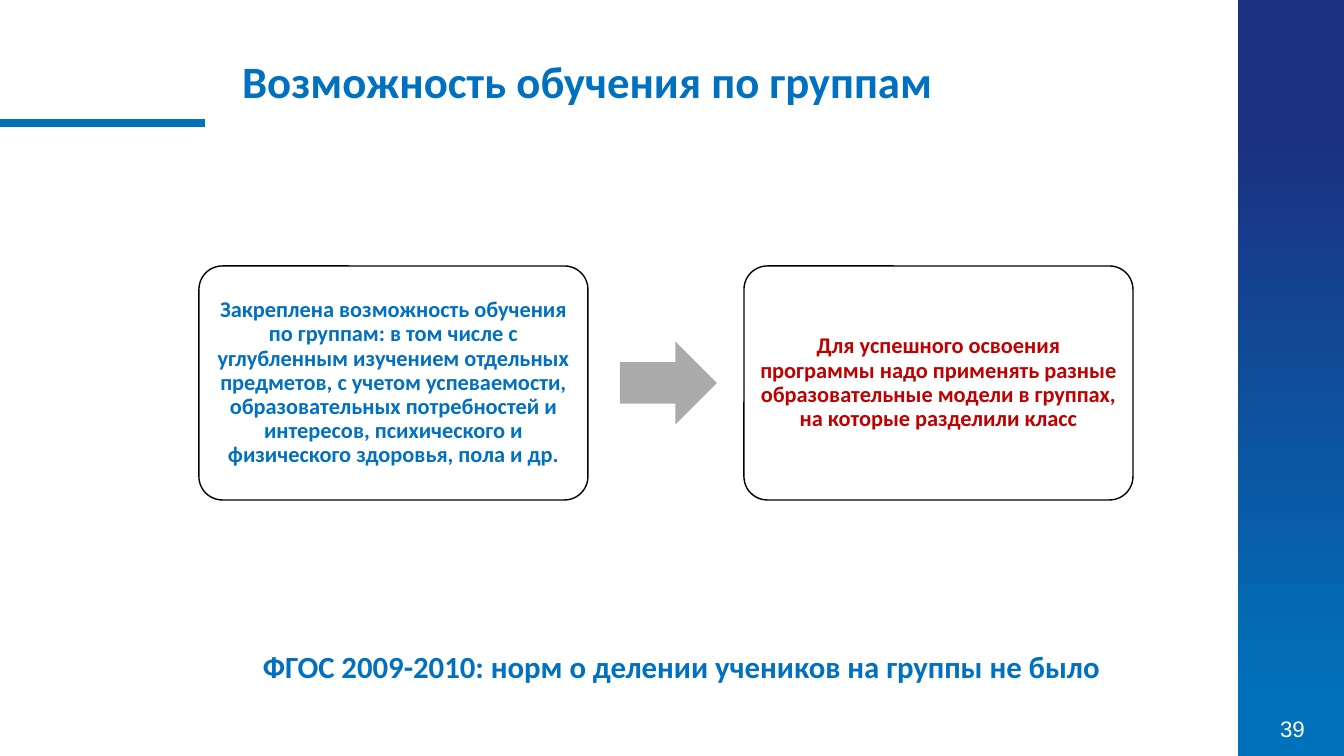
import pptx
import pptx.dml.color
import pptx.enum.shapes
import pptx.enum.text
import pptx.oxml
import pptx.oxml.ns
import pptx.util

TITLE = "Возможность обучения по группам"
CAPTION = "ФГОС 2009-2010: норм о делении учеников на группы не было"
PAGE_NUMBER = "39"
BLUE, RED, WHITE, BLACK, GREY = "0070C0", "C00000", "FFFFFF", "000000", "ABABAB"
BAND_BLUE, BAND_NAVY = "0072BC", "1B3281"
CARDS = [
    ("Закреплена возможность обучения по группам: в том числе с углубленным "
     "изучением отдельных предметов, с учетом успеваемости, образовательных "
     "потребностей и интересов, психического и физического здоровья, пола и др.", BLUE),
    ("Для успешного освоения программы надо применять разные образовательные "
     "модели в группах, на которые разделили класс", RED),
]

# Lengths in px
PAGE_WIDTH, PAGE_HEIGHT = 1344, 756
BAND_LEFT = 1238
CARD_LEFT, CARD_TOP, CARD_WIDTH, CARD_HEIGHT, CARD_STEP = 199, 266, 389, 234, 545
CARD_INSET = 7
ARROW_LEFT, ARROW_WIDTH, ARROW_HEIGHT = 620, 97, 83

SHAPE = pptx.enum.shapes.MSO_SHAPE
ALIGN = pptx.enum.text.PP_ALIGN
ANCHOR = pptx.enum.text.MSO_ANCHOR


def px(length):
    return pptx.util.Emu(round(length * 914400 / 100.8))


def rgb(color):
    return pptx.dml.color.RGBColor.from_string(color)


def write(shape, text, color, size, align=ALIGN.CENTER, anchor=ANCHOR.TOP,
          name="Calibri", bold=True, line_spacing=1.0):
    frame = shape.text_frame
    frame.word_wrap = True
    frame.auto_size = pptx.enum.text.MSO_AUTO_SIZE.NONE
    frame.vertical_anchor = anchor
    para = frame.paragraphs[0]
    para.alignment = align
    para.line_spacing = line_spacing
    span = para.add_run()
    span.text = text
    for key, value in {"name": name, "size": pptx.util.Pt(size), "bold": bold}.items():
        setattr(span.font, key, value)
    span.font.color.rgb = rgb(color)


def add_block(page, kind, left, top, width, height):
    block = page.shapes.add_shape(kind, px(left), px(top), px(width), px(height))
    block.shadow.inherit = False
    block.line.fill.background()
    return block


def add_text_box(page, left, top, width, height):
    return page.shapes.add_textbox(px(left), px(top), px(width), px(height))


def add_side_band(page):
    band = add_block(page, SHAPE.RECTANGLE, BAND_LEFT, 0, PAGE_WIDTH - BAND_LEFT, PAGE_HEIGHT)
    band.fill.gradient()
    band.fill.gradient_angle = 270
    stops = [(0.18, BAND_NAVY), (0.94, BAND_BLUE)]
    for stop, (position, color) in zip(band.fill.gradient_stops, stops):
        stop.position = position
        stop.color.rgb = rgb(color)


def add_title_rule(page):
    rule = page.shapes.add_connector(
        pptx.enum.shapes.MSO_CONNECTOR.STRAIGHT, 0, px(123), px(205), px(123))
    rule.line.color.rgb = rgb(BAND_BLUE)
    rule.line.width = pptx.util.Pt(6)
    properties = rule._element.spPr
    properties.append(pptx.oxml.parse_xml(
        f"<a:effectLst {pptx.oxml.ns.nsdecls('a')}/>"))


def add_title(page):
    title = page.shapes.title
    place = {"left": 232, "top": 49, "width": 978, "height": 65}
    for key, value in place.items():
        setattr(title, key, px(value))
    write(title, TITLE, BLUE, 32, align=ALIGN.LEFT)


def add_card(page, left, text, color):
    card = add_block(page, SHAPE.ROUNDED_RECTANGLE, left, CARD_TOP, CARD_WIDTH, CARD_HEIGHT)
    card.adjustments[0] = 0.1
    card.fill.solid()
    card.fill.fore_color.rgb = rgb(WHITE)
    card.line.color.rgb = rgb(BLACK)
    card.line.width = pptx.util.Pt(1)
    for side in ("left", "top", "right", "bottom"):
        setattr(card.text_frame, f"margin_{side}", px(CARD_INSET))
    write(card, text, color, 16, anchor=ANCHOR.MIDDLE, line_spacing=0.9)


def add_arrow(page):
    top = CARD_TOP + (CARD_HEIGHT - ARROW_HEIGHT) / 2
    arrow = add_block(page, SHAPE.RIGHT_ARROW, ARROW_LEFT, top, ARROW_WIDTH, ARROW_HEIGHT)
    arrow.fill.solid()
    arrow.fill.fore_color.rgb = rgb(GREY)


def main():
    deck = pptx.Presentation()
    deck.slide_width, deck.slide_height = px(PAGE_WIDTH), px(PAGE_HEIGHT)
    page = deck.slides.add_slide(deck.slide_layouts[5])
    add_side_band(page)
    write(add_text_box(page, 1252, 708, 81, 41), PAGE_NUMBER, WHITE, 16,
          anchor=ANCHOR.MIDDLE, name="Arial", bold=False)
    add_title_rule(page)
    add_title(page)
    for index, (text, color) in enumerate(CARDS):
        add_card(page, CARD_LEFT + index * CARD_STEP, text, color)
    add_arrow(page)
    write(add_text_box(page, 170, 643, 1023, 47), CAPTION, BLUE, 22)
    deck.save("out.pptx")


if __name__ == "__main__":
    main()
